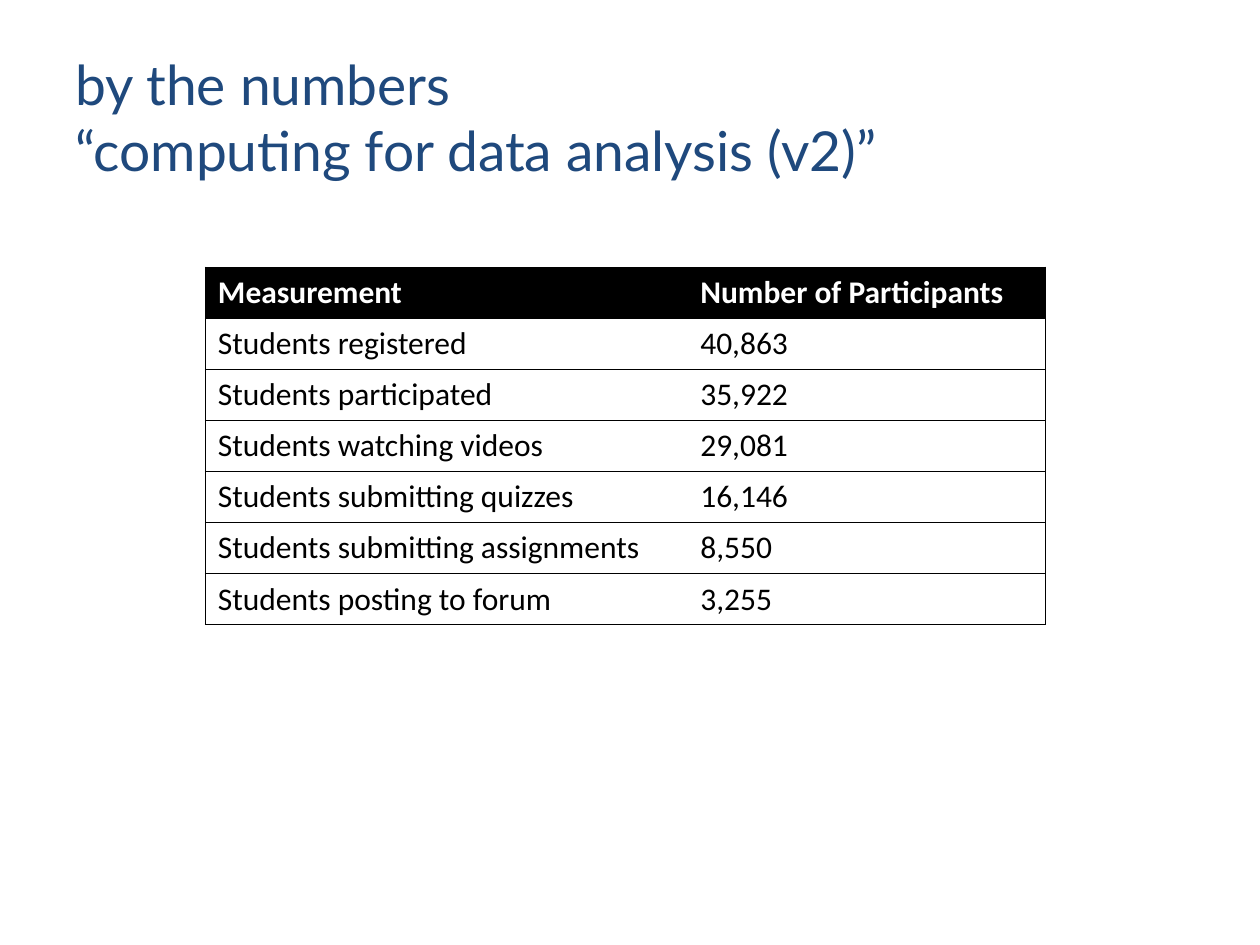
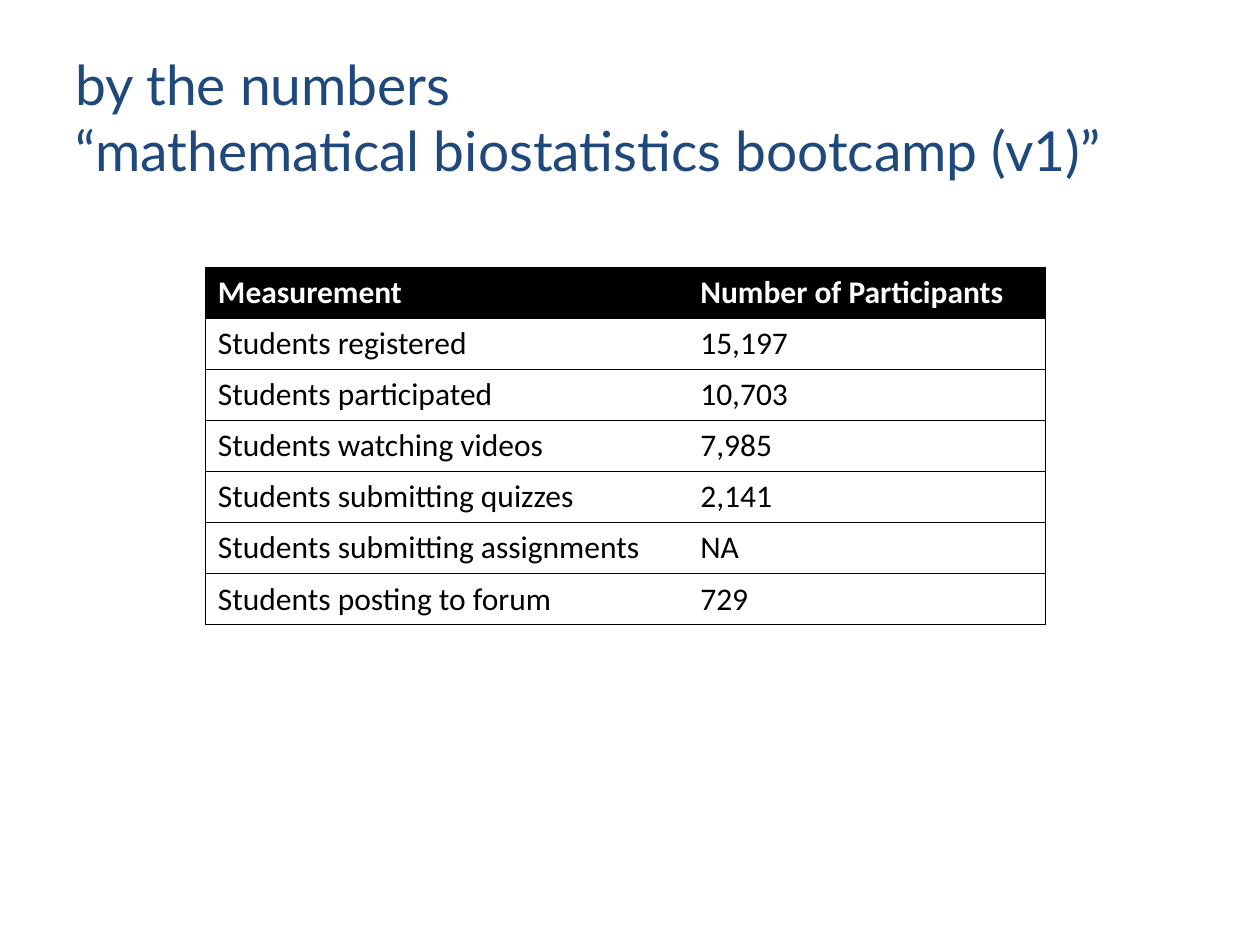
import pptx
import pptx.util
import pptx.dml.color
import pptx.enum.text
import pptx.oxml
import lxml.etree

RGBColor = pptx.dml.color.RGBColor
NAVY = RGBColor(0x1F, 0x49, 0x7D)
BLACK = RGBColor(0, 0, 0)
WHITE = RGBColor(255, 255, 255)
TITLE_FONT, TABLE_FONT = "Lato", "Calibri"

W, H = pptx.util.Inches(10), pptx.util.Inches(7.5)

# Boxes: left, top, width, height in inches
TITLE_BOX = [pptx.util.Inches(n) for n in (0.5, 0.3, 9, 1.25)]
TABLE_BOX = [pptx.util.Inches(n) for n in (1.63, 2.12, 6.67, 2.84)]
FIRST_COLUMN_SHARE = 0.574
BORDER = pptx.util.Pt(0.75)
NO_STYLE = "{2D5ABB26-0587-4C30-8999-92F81FD0307C}"

HEADER = ("Measurement", "Number of Participants")
MEASUREMENTS = (
    "Students registered",
    "Students participated",
    "Students watching videos",
    "Students submitting quizzes",
    "Students submitting assignments",
    "Students posting to forum",
)
COURSES = (
    ("“computing for data analysis (v2)”",
     ("40,863", "35,922", "29,081", "16,146", "8,550", "3,255")),
    ("“mathematical biostatistics bootcamp (v1)”",
     ("15,197", "10,703", "7,985", "2,141", "NA", "729")),
)


def add_run(p, text, font, size, color, bold=False):
    r = p.add_run()
    r.text = text
    r.font.name, r.font.size, r.font.bold = font, pptx.util.Pt(size), bold
    r.font.color.rgb = color


def add_title(s, box, course):
    tf = s.shapes.add_textbox(*box).text_frame
    tf.word_wrap = True
    tf.vertical_anchor = pptx.enum.text.MSO_ANCHOR.MIDDLE
    p = tf.paragraphs[0]
    add_run(p, "by the numbers ", TITLE_FONT, 31.5, NAVY)
    p.add_line_break()
    add_run(p, course, TITLE_FONT, 31.5, NAVY)


def set_borders(cell, sides):
    """Draw black lines on the given sides; L, R, T, B is the schema order."""
    tc_pr = cell._tc.get_or_add_tcPr()
    for i, side in enumerate(n for n in "LRTB" if n in sides):
        ln = pptx.oxml.parse_xml(
            '<a:ln%s xmlns:a="http://schemas.openxmlformats.org/drawingml/2006/main"'
            ' w="%d"><a:solidFill><a:srgbClr val="%s"/></a:solidFill></a:ln%s>'
            % (side, BORDER, BLACK, side))
        tc_pr.insert(i, ln)


def add_participant_table(s, box, counts):
    rows = [HEADER, *zip(MEASUREMENTS, counts)]
    left, top, width, height = box
    table = s.shapes.add_table(len(rows), 2, left, top, width, height).table
    table._tbl.tblPr.find("{*}tableStyleId").text = NO_STYLE
    table.columns[0].width = int(width * FIRST_COLUMN_SHARE)
    table.columns[1].width = width - table.columns[0].width

    for i, row in enumerate(rows):
        is_header = i == 0
        for j, text in enumerate(row):
            cell = table.cell(i, j)
            cell.fill.solid()
            cell.fill.fore_color.rgb = BLACK if is_header else WHITE
            add_run(cell.text_frame.paragraphs[0], text, TABLE_FONT, 18,
                    WHITE if is_header else BLACK, bold=is_header)
            # Horizontal rules everywhere, vertical ones only on the outside
            set_borders(cell, "TB" + "LR"[j])


def add_course_slide(prs, course, counts):
    s = prs.slides.add_slide(prs.slide_layouts[6])
    add_title(s, TITLE_BOX, course)
    add_participant_table(s, TABLE_BOX, counts)


def main():
    prs = pptx.Presentation()
    prs.slide_width, prs.slide_height = W, H
    for course, counts in COURSES:
        add_course_slide(prs, course, counts)
    prs.save("out.pptx")


if __name__ == "__main__":
    main()
